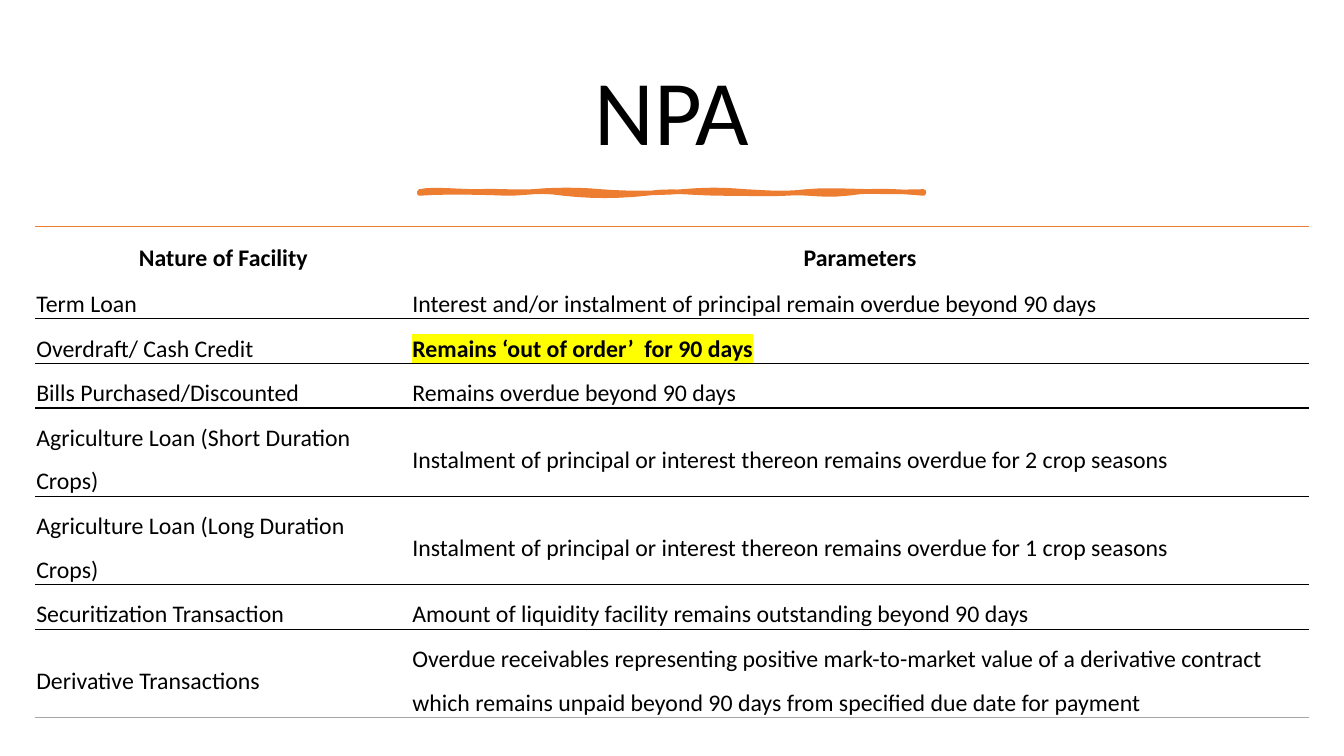
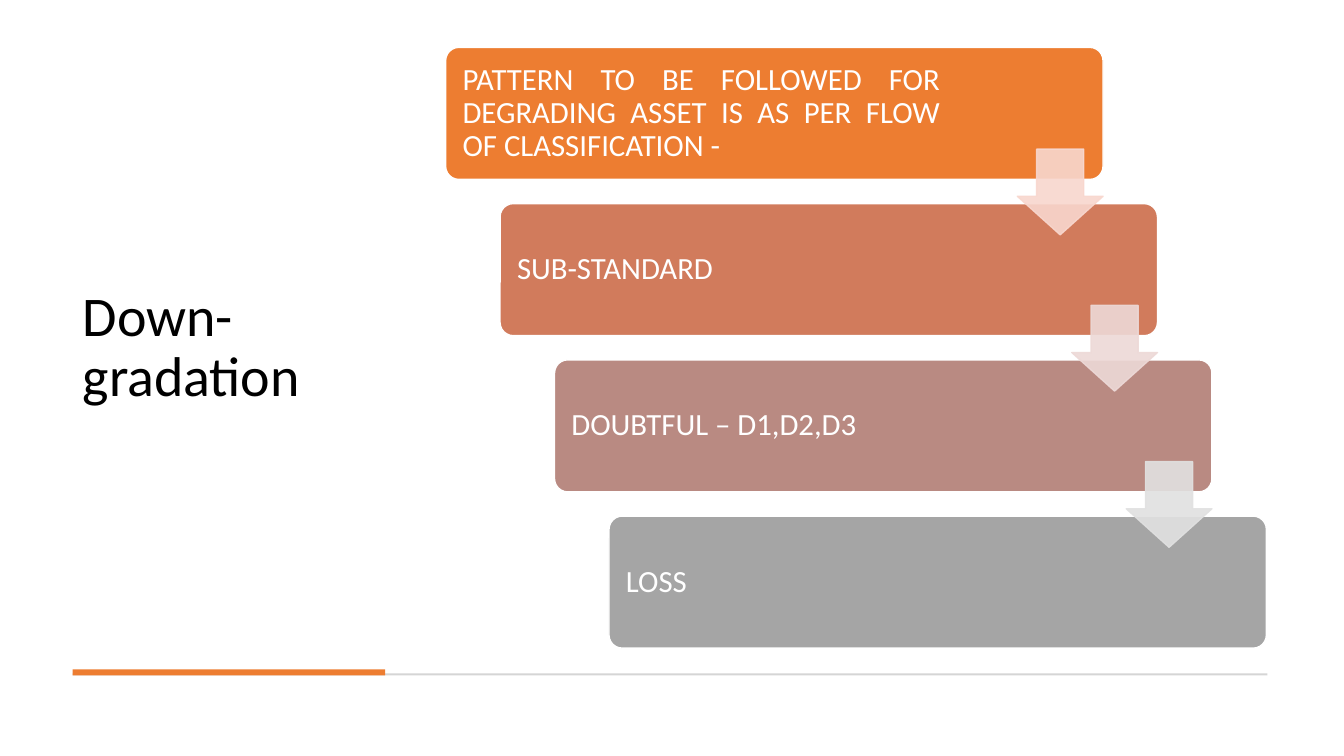
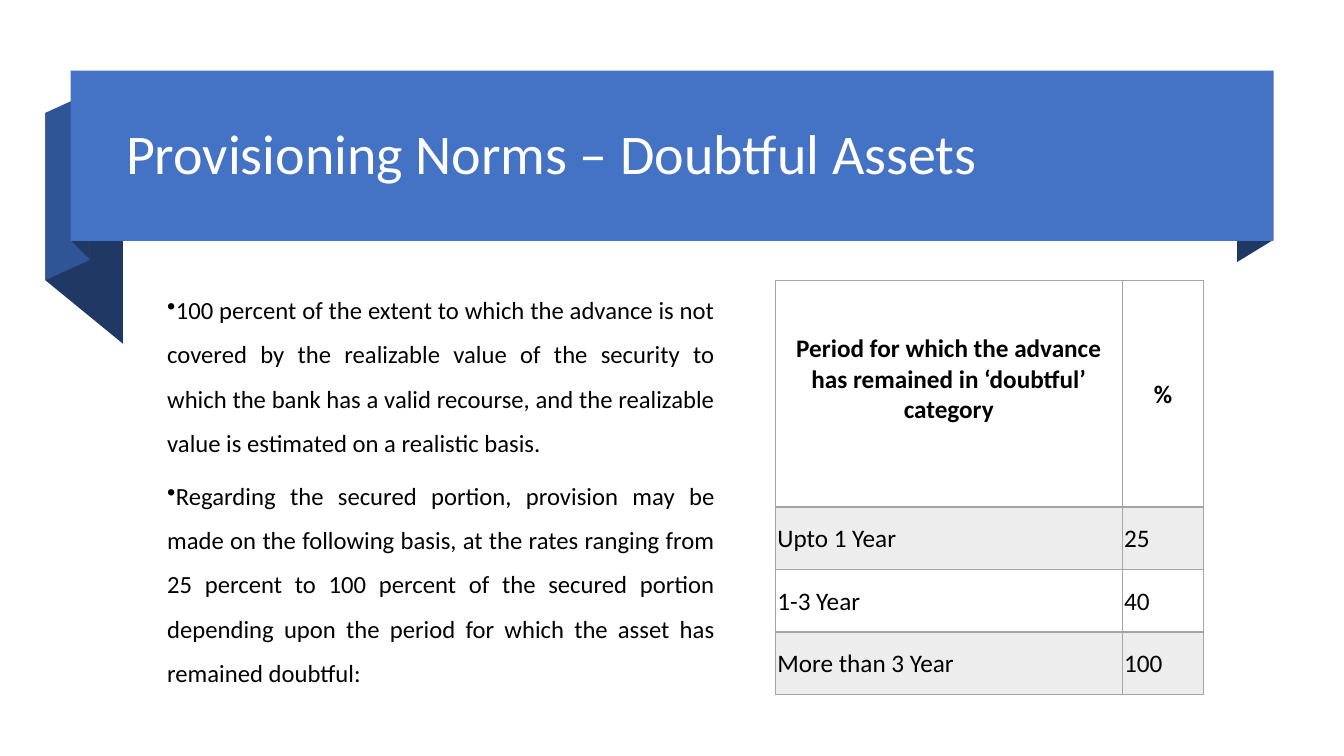
from lxml.etree import SubElement
from pptx import Presentation
from pptx.dml.color import RGBColor
from pptx.enum.shapes import MSO_SHAPE
from pptx.enum.text import MSO_ANCHOR, MSO_AUTO_SIZE, PP_ALIGN
from pptx.oxml import parse_xml
from pptx.oxml.ns import nsdecls, qn
from pptx.util import Inches, Pt

ORANGE, BLUE, MID_BLUE, NAVY = "ED7D31", "4472C4", "2F5597", "203864"
GREY, PALE_GREY, RULE_GREY = "A5A5A5", "EDEDED", "D5D5D5"
BLACK, WHITE, YELLOW = "000000", "FFFFFF", "FFFF00"
PLAIN_TABLE = "{2D5ABB26-0587-4C30-8999-92F81FD0307C}"

# Brush stroke: a start point, then (control, control, end) for each curve
STROKE_START = (4.16, 1.9)
STROKE_CURVES = [
    (4.28, 1.87, 4.54, 1.9, 4.73, 1.9), (4.92, 1.89, 5.09, 1.91, 5.29, 1.9),
    (5.49, 1.88, 5.74, 1.88, 5.96, 1.9), (6.17, 1.92, 6.53, 1.92, 6.77, 1.9),
    (7.02, 1.88, 7.14, 1.88, 7.39, 1.9), (7.63, 1.91, 7.74, 1.93, 8, 1.9),
    (8.26, 1.87, 8.67, 1.92, 9.16, 1.9), (9.17, 1.91, 9.16, 1.91, 9.16, 1.92),
    (8.95, 1.9, 8.65, 1.88, 8.4, 1.92), (8.15, 1.95, 8.01, 1.9, 7.79, 1.92),
    (7.56, 1.93, 7.47, 1.92, 7.17, 1.92), (6.87, 1.92, 6.67, 1.88, 6.41, 1.92),
    (6.14, 1.95, 5.85, 1.95, 5.59, 1.92), (5.34, 1.88, 5.23, 1.92, 5.03, 1.92),
    (4.83, 1.91, 4.38, 1.9, 4.16, 1.92),
]

FACILITIES = [
    ("Nature of Facility", "Parameters"),
    ("Term Loan", "Interest and/or instalment of principal remain overdue beyond 90 days"),
    ("Overdraft/ Cash Credit", "Remains ‘out of order’  for 90 days"),
    ("Bills Purchased/Discounted", "Remains overdue beyond 90 days"),
    ("Agriculture Loan (Short Duration Crops)",
     "Instalment of principal or interest thereon remains overdue for 2 crop seasons"),
    ("Agriculture Loan (Long Duration Crops)",
     "Instalment of principal or interest thereon remains overdue for 1 crop seasons"),
    ("Securitization Transaction",
     "Amount of liquidity facility remains outstanding beyond 90 days"),
    ("Derivative Transactions",
     "Overdue receivables representing positive mark-to-market value of a derivative "
     "contract which remains unpaid beyond 90 days from specified due date for payment"),
]
STAGES = [
    ("PATTERN TO BE FOLLOWED FOR DEGRADING ASSET IS AS PER FLOW OF CLASSIFICATION -",
     ORANGE, PP_ALIGN.JUSTIFY),
    ("SUB-STANDARD", "D17B5C", PP_ALIGN.LEFT),
    ("DOUBTFUL – D1,D2,D3", "B98A82", PP_ALIGN.LEFT),
    ("LOSS", GREY, PP_ALIGN.LEFT),
]
ARROW_COLOURS = ["F8D7CE", "EDD9D7", "E1E1E1"]
NORMS = [
    "100 percent of the extent to which the advance is not covered by the realizable value "
    "of the security to which the bank has a valid recourse, and the realizable value is "
    "estimated on a realistic basis.",
    "Regarding the secured portion, provision may be made on the following basis, at the "
    "rates ranging from 25 percent to 100 percent of the secured portion depending upon the "
    "period for which the asset has remained doubtful:",
]
RATES = [
    ("Period for which the advance has remained in ‘doubtful’ category", "%"),
    ("Upto 1 Year", "25"),
    ("1-3 Year", "40"),
    ("More than 3 Year", "100"),
]


def rgb(colour):
    return RGBColor.from_string(colour)


def curve_points(start, curves, steps=6):
    """Sample a chain of cubic curves."""
    points = [start]
    for ax, ay, bx, by, ex, ey in curves:
        sx, sy = points[-1]
        for step in range(1, steps + 1):
            t = step / steps
            u = 1 - t
            points.append(tuple(
                u**3 * s + 3 * u * u * t * a + 3 * u * t * t * b + t**3 * e
                for s, a, b, e in ((sx, ax, bx, ex), (sy, ay, by, ey))))
    return points


class Deck:
    font = "Calibri"

    def __init__(self):
        self.file = Presentation()
        self.file.slide_width, self.file.slide_height = Inches(13.33), Inches(7.5)
        self.slide = None

    def new_slide(self):
        self.slide = self.file.slides.add_slide(self.file.slide_layouts[5])

    def add_text(self, paragraph, text, size, colour=BLACK, bold=False,
                 align=PP_ALIGN.LEFT, spacing=0.9):
        paragraph.alignment, paragraph.line_spacing = align, spacing
        run = paragraph.add_run()
        run.text = text
        run.font.name, run.font.size, run.font.bold = self.font, Pt(size), bold
        run.font.color.rgb = rgb(colour)

    def title(self, text, x, y, w, h, size=40, colour=BLACK, align=PP_ALIGN.LEFT):
        title = self.slide.shapes.title
        title.left, title.top, title.width, title.height = map(Inches, (x, y, w, h))
        frame = title.text_frame
        frame.word_wrap, frame.auto_size = True, MSO_AUTO_SIZE.NONE
        frame.vertical_anchor = MSO_ANCHOR.MIDDLE
        self.add_text(frame.paragraphs[0], text, size, colour, align=align)
        self.slide.shapes._spTree.append(title._element)  # above the band

    def paint(self, shape, fill, line=None, width=1, opacity=100):
        shape.shadow.inherit = False
        shape.fill.solid()
        shape.fill.fore_color.rgb = rgb(fill)
        if line:
            shape.line.color.rgb, shape.line.width = rgb(line), Pt(width)
        else:
            shape.line.fill.background()
        if opacity < 100:
            for colour in shape._element.spPr.iter(qn("a:srgbClr")):
                SubElement(colour, qn("a:alpha"), val=str(opacity * 1000))
        return shape

    def shape(self, kind, x, y, w, h, fill, adjust=(), **style):
        shape = self.slide.shapes.add_shape(kind, *map(Inches, (x, y, w, h)))
        for index, value in enumerate(adjust):
            shape.adjustments[index] = value
        return self.paint(shape, fill, **style)

    def outline(self, points, fill, **style):
        start, *rest = [(Inches(x), Inches(y)) for x, y in points]
        builder = self.slide.shapes.build_freeform(*start)
        builder.add_line_segments(rest, close=True)
        return self.paint(builder.convert_to_shape(), fill, **style)

    def card(self, text, x, y, w, h, fill, align):
        card = self.shape(MSO_SHAPE.ROUNDED_RECTANGLE, x, y, w, h, fill, [0.1], line=WHITE)
        frame = card.text_frame
        frame.word_wrap, frame.vertical_anchor = True, MSO_ANCHOR.MIDDLE
        frame.margin_left, frame.margin_right = Inches(0.13), Inches(1.58)
        self.add_text(frame.paragraphs[0], text, 22, WHITE, align=align)

    def bullets(self, items, x, y, w, h, size):
        frame = self.slide.shapes.add_textbox(*map(Inches, (x, y, w, h))).text_frame
        frame.word_wrap = True
        for index, item in enumerate(items):
            paragraph = frame.add_paragraph() if index else frame.paragraphs[0]
            self.add_text(paragraph, item, size, align=PP_ALIGN.JUSTIFY, spacing=1.5)
            paragraph.space_after = Pt(6)
            properties = paragraph._p.get_or_add_pPr()
            properties.set("marL", "0")
            properties.set("indent", str(-Inches(0.25)))
            SubElement(properties, qn("a:buChar"), char="•")

    def table(self, rows, x, y, widths, heights, size, margin, spacing):
        table = self.slide.shapes.add_table(
            len(rows), len(widths), Inches(x), Inches(y),
            Inches(sum(widths)), Inches(sum(heights))).table
        table.horz_banding = False
        table._tbl.tblPr.find(qn("a:tableStyleId")).text = PLAIN_TABLE
        for column, width in zip(table.columns, widths):
            column.width = Inches(width)
        for r, (row, height) in enumerate(zip(rows, heights)):
            table.rows[r].height = Inches(height)
            for c, text in enumerate(row):
                cell = table.cell(r, c)
                cell.margin_left = cell.margin_right = cell.margin_top = Inches(margin)
                cell.margin_bottom = 0
                cell.vertical_anchor = MSO_ANCHOR.MIDDLE
                cell.fill.background()
                self.add_text(cell.text_frame.paragraphs[0], text, size, bold=r == 0,
                              align=PP_ALIGN.LEFT if r else PP_ALIGN.CENTER, spacing=spacing)
        return table

    def borders(self, cell, **sides):
        """Each side (L, R, T, B) is a (colour, width) pair."""
        properties = cell._tc.get_or_add_tcPr()
        drawn = [side for side in "LRTB" if side in sides]
        for index, side in enumerate(drawn):
            colour, width = sides[side]
            properties.insert(index, parse_xml(
                f'<a:ln{side} {nsdecls("a")} w="{Pt(width)}"><a:solidFill>'
                f'<a:srgbClr val="{rgb(colour)}"/></a:solidFill></a:ln{side}>'))

    def highlight(self, run, colour):
        mark = parse_xml(f'<a:highlight {nsdecls("a")}>'
                         f'<a:srgbClr val="{rgb(colour)}"/></a:highlight>')
        run._r.rPr.find(qn("a:solidFill")).addnext(mark)


def npa_slide(deck):
    deck.new_slide()
    deck.title("NPA", 0.7, 0.46, 11.93, 1.37, size=66, align=PP_ALIGN.CENTER)
    deck.outline(curve_points(STROKE_START, STROKE_CURVES), ORANGE, line=ORANGE, width=3.25)

    # Facilities, ruled under each row below the header
    single, double = 0.44, 0.87
    heights = [0.47, single, single, single, double, double, single, double]
    facilities = deck.table(FACILITIES, 0.35, 2.25, [3.73, 8.9], heights, 17, 0.01, 1.5)
    last = len(FACILITIES) - 1
    for r in range(last + 1):
        for c in range(2):
            cell = facilities.cell(r, c)
            if r == 0:
                deck.borders(cell, T=(ORANGE, 1))
            else:
                deck.borders(cell, B=(GREY if r == last else BLACK, 1))
    out_of_order = facilities.cell(2, 1).text_frame.paragraphs[0].runs[0]
    out_of_order.font.bold = True
    deck.highlight(out_of_order, YELLOW)


def downgradation_slide(deck):
    deck.new_slide()
    deck.title("Down-gradation", 0.72, 0.47, 3.1, 5.97)

    # Footer rule with its accent
    deck.shape(MSO_SHAPE.RECTANGLE, 0.72, 6.68, 11.85, 0.02, RULE_GREY)
    deck.shape(MSO_SHAPE.RECTANGLE, 0.72, 6.64, 3.1, 0.06, ORANGE)

    # Staircase of stages, then the arrows over it
    left, top, across, down = 4.42, 0.47, 0.54, 1.55
    for i, (stage, fill, align) in enumerate(STAGES):
        deck.card(stage, left + i * across, top + i * down, 6.52, 1.31, fill, align)
    for i, colour in enumerate(ARROW_COLOURS):
        deck.shape(MSO_SHAPE.DOWN_ARROW, left + 5.67 + i * across, top + 1.01 + i * down,
                   0.85, 0.85, colour, [0.55, 0.45], line=colour, opacity=90)


def provisioning_slide(deck):
    deck.new_slide()

    # Folded ribbon behind the title
    folds = [
        (NAVY, [(12.63, 2.38), (12.27, 2.6), (12.27, 0.91), (12.63, 0.7)]),
        (NAVY, [(1.22, 3.41), (0.45, 2.78), (0.45, 1.12), (1.22, 1.75)]),
        (MID_BLUE, [(0.89, 2.58), (0.45, 2.78), (0.45, 1.12), (0.89, 0.92)]),
        (NAVY, [(0.89, 2.57), (0.71, 2.39), (0.71, 0.7), (0.89, 0.89)]),
    ]
    for fill, points in folds:
        deck.outline(points, fill)
    deck.shape(MSO_SHAPE.RECTANGLE, 0.7, 0.7, 11.93, 1.69, BLUE)
    deck.title("Provisioning Norms – Doubtful Assets", 1.15, 0.83, 11.27, 1.45, colour=WHITE)

    deck.bullets(NORMS, 1.56, 2.73, 5.63, 4.56, 17.6)

    # Rates, with every other row shaded
    rates = deck.table(RATES, 7.69, 2.78, [3.44, 0.81], [2.25] + [0.62] * 3, 18, 0.02, 1)
    thin, thick = (GREY, 1), (GREY, 2)
    for r in range(len(RATES)):
        for c in range(2):
            cell = rates.cell(r, c)
            if r % 2:
                cell.fill.solid()
                cell.fill.fore_color.rgb = rgb(PALE_GREY)
            deck.borders(cell, L=thin, R=thin, T=thick if r == 1 else thin,
                         B=thick if r == 0 else thin)
    rates.cell(0, 0).margin_bottom = Inches(0.3)


def main():
    deck = Deck()
    npa_slide(deck)
    downgradation_slide(deck)
    provisioning_slide(deck)
    deck.file.save("out.pptx")


if __name__ == "__main__":
    main()
